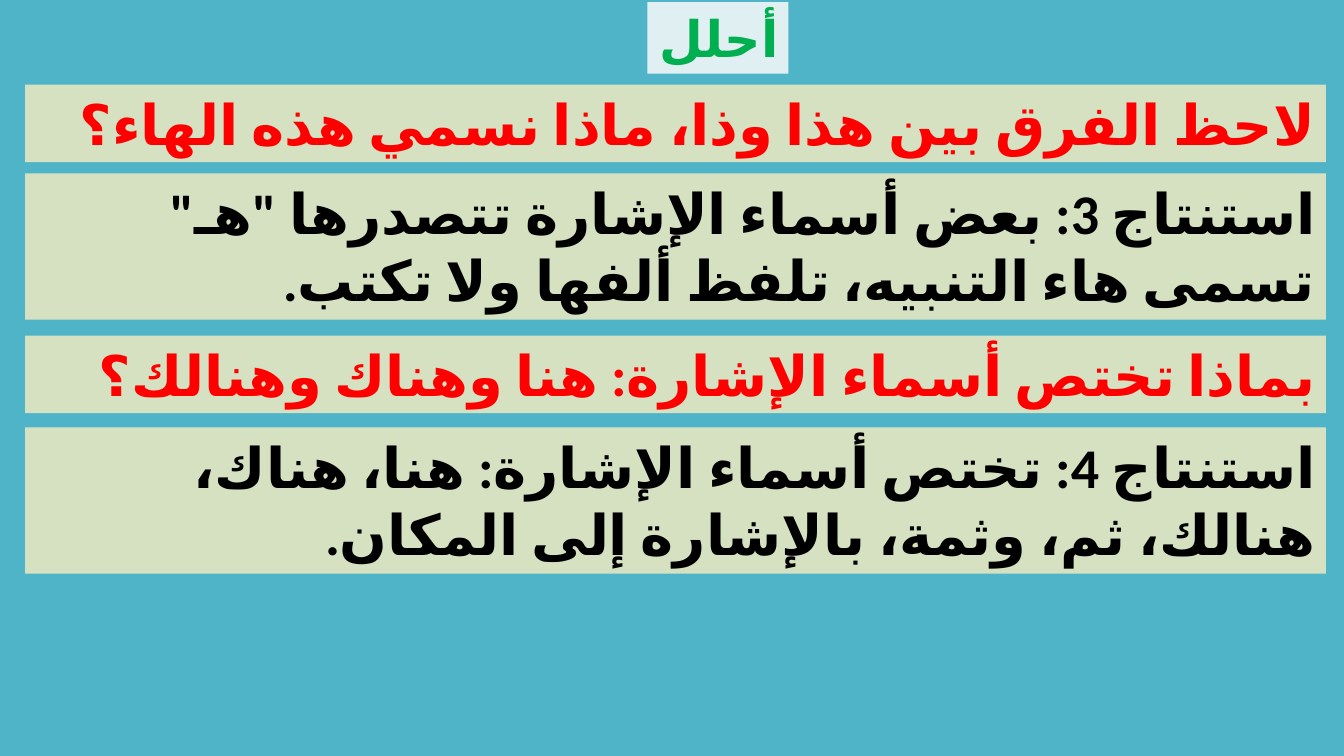
"""Build the Arabic grammar slide about demonstrative pronouns."""
from dataclasses import dataclass

from lxml import etree
from pptx import Presentation
from pptx import util as u
from pptx.dml.color import RGBColor
from pptx.enum import text
from pptx.oxml import ns

EMU_PER_PX = 9144


@dataclass(frozen=True)
class Theme:
    """Colours, font and type sizes of the slide."""
    background: str = "50B4C8"
    title_fill: str = "E0EFF2"
    band_fill: str = "D5E1C1"
    title: str = "00B050"
    question: str = "FF0000"
    conclusion: str = "000000"
    font: str = "Calibri"
    language: str = "ar-SA"
    title_size: int = 36
    body_size: int = 40


THEME = Theme()


def px(length):
    """Turn a length in hundredths of an inch into EMU."""
    return u.Emu(length * EMU_PER_PX)


def paint(fill, colour):
    """Give a fill one solid colour."""
    fill.solid()
    fill.fore_color.rgb = RGBColor.from_string(colour)


def write(frame, words, *, colour, size):
    """Write bold right-to-left text in a frame."""
    frame.word_wrap = True
    frame.auto_size = text.MSO_AUTO_SIZE.NONE
    frame.vertical_anchor = text.MSO_ANCHOR.TOP
    paragraph = frame.paragraphs[0]
    paragraph.alignment = text.PP_ALIGN.RIGHT
    paragraph._p.get_or_add_pPr().set("rtl", "1")
    run = paragraph.add_run()
    run.text = words
    run.font.name = THEME.font
    run.font.size = u.Pt(size)
    run.font.bold = True
    run.font.color.rgb = RGBColor.from_string(colour)
    properties = run._r.get_or_add_rPr()
    properties.set("lang", THEME.language)
    etree.SubElement(properties, ns.qn("a:cs"), typeface=THEME.font)


def add_panel(slide, box, words, *, fill, colour, size):
    """Add a filled text panel at left, top, width, height."""
    shape = slide.shapes.add_textbox(*map(px, box))
    paint(shape.fill, fill)
    write(shape.text_frame, words, colour=colour, size=size)


def add_band(slide, top, height, words, colour):
    """Add a full-width panel holding a question or a conclusion."""
    add_panel(slide, (25, top, 1290, height), words,
              fill=THEME.band_fill, colour=colour, size=THEME.body_size)


def main():
    """Build and save the slide."""
    presentation = Presentation()
    presentation.slide_width = px(1333)
    presentation.slide_height = px(750)
    slide = presentation.slides.add_slide(presentation.slide_layouts[6])
    paint(slide.background.fill, THEME.background)

    add_panel(slide, (642, 2, 140, 71), "أحلل:", fill=THEME.title_fill,
              colour=THEME.title, size=THEME.title_size)
    lessons = [
        (84, "لاحظ الفرق بين هذا وذا، ماذا نسمي هذه الهاء؟",
         172, 'استنتاج 3: بعض أسماء الإشارة تتصدرها "هـ" تسمى هاء التنبيه، تلفظ ألفها ولا تكتب.'),
        (333, "بماذا تختص أسماء الإشارة: هنا وهناك وهنالك؟",
         424, "استنتاج 4: تختص أسماء الإشارة: هنا، هناك، هنالك، ثم، وثمة، بالإشارة إلى المكان."),
    ]
    for question_top, question, conclusion_top, conclusion in lessons:
        add_band(slide, question_top, 77, question, THEME.question)
        add_band(slide, conclusion_top, 145, conclusion, THEME.conclusion)
    presentation.save("out.pptx")


if __name__ == "__main__":
    main()
